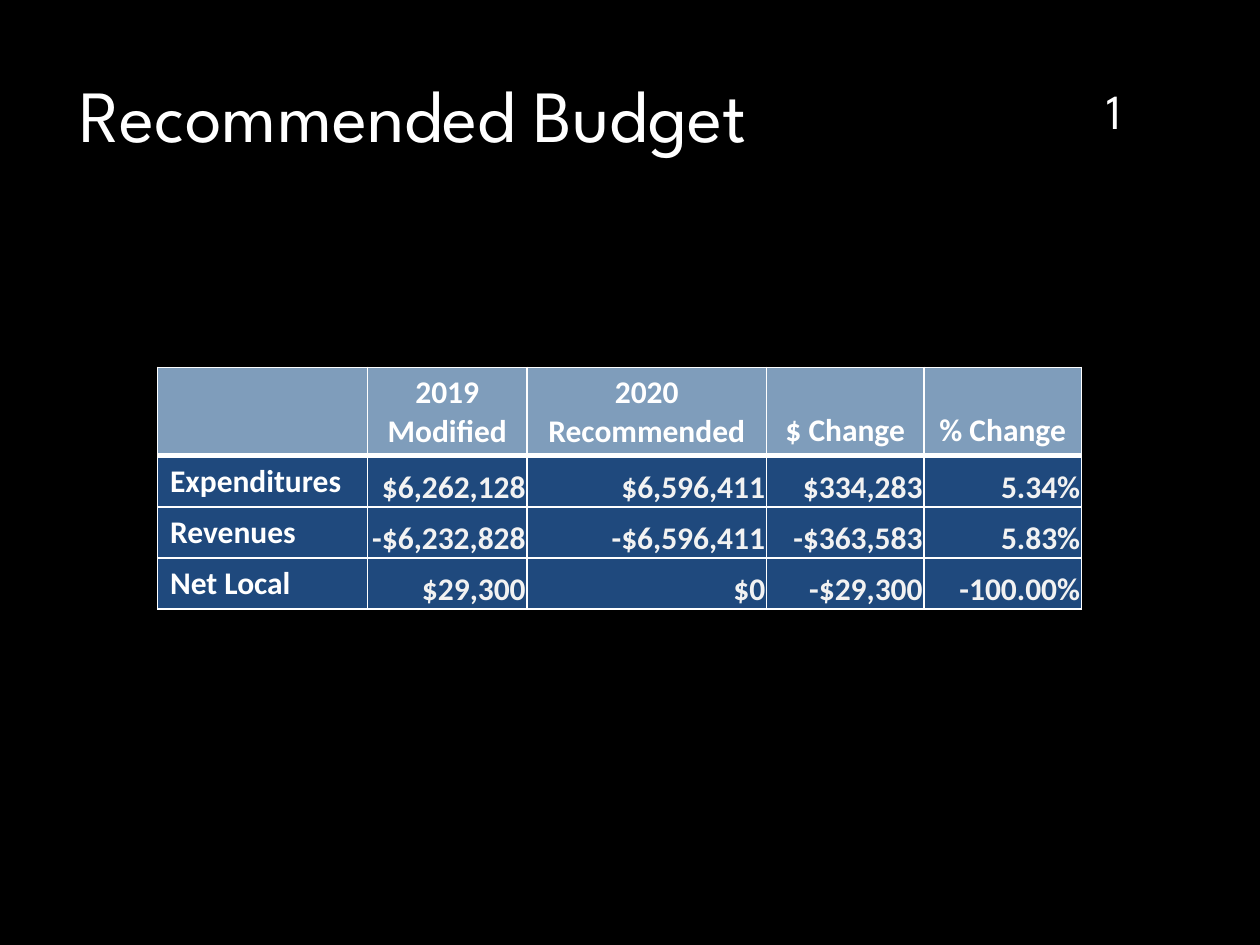
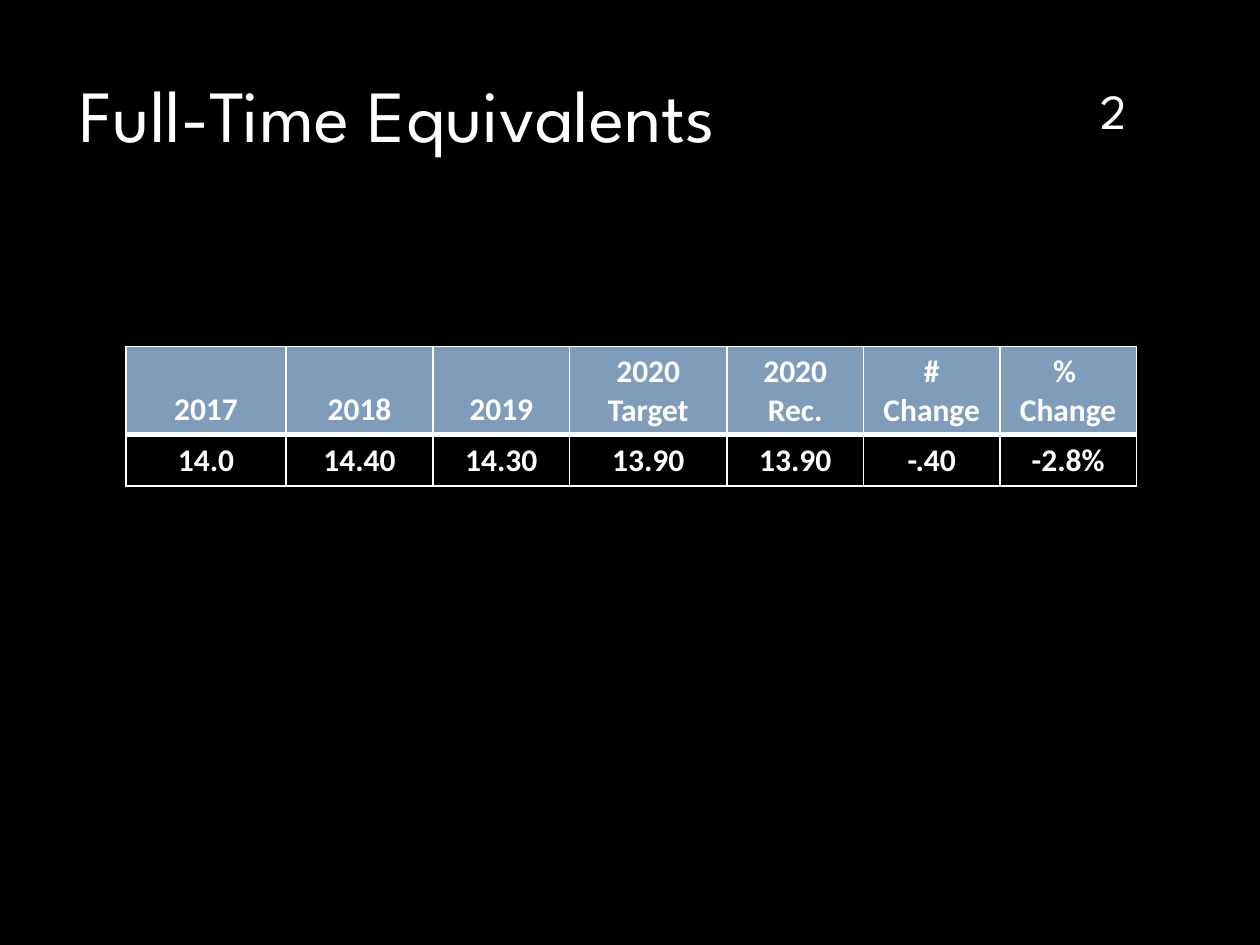
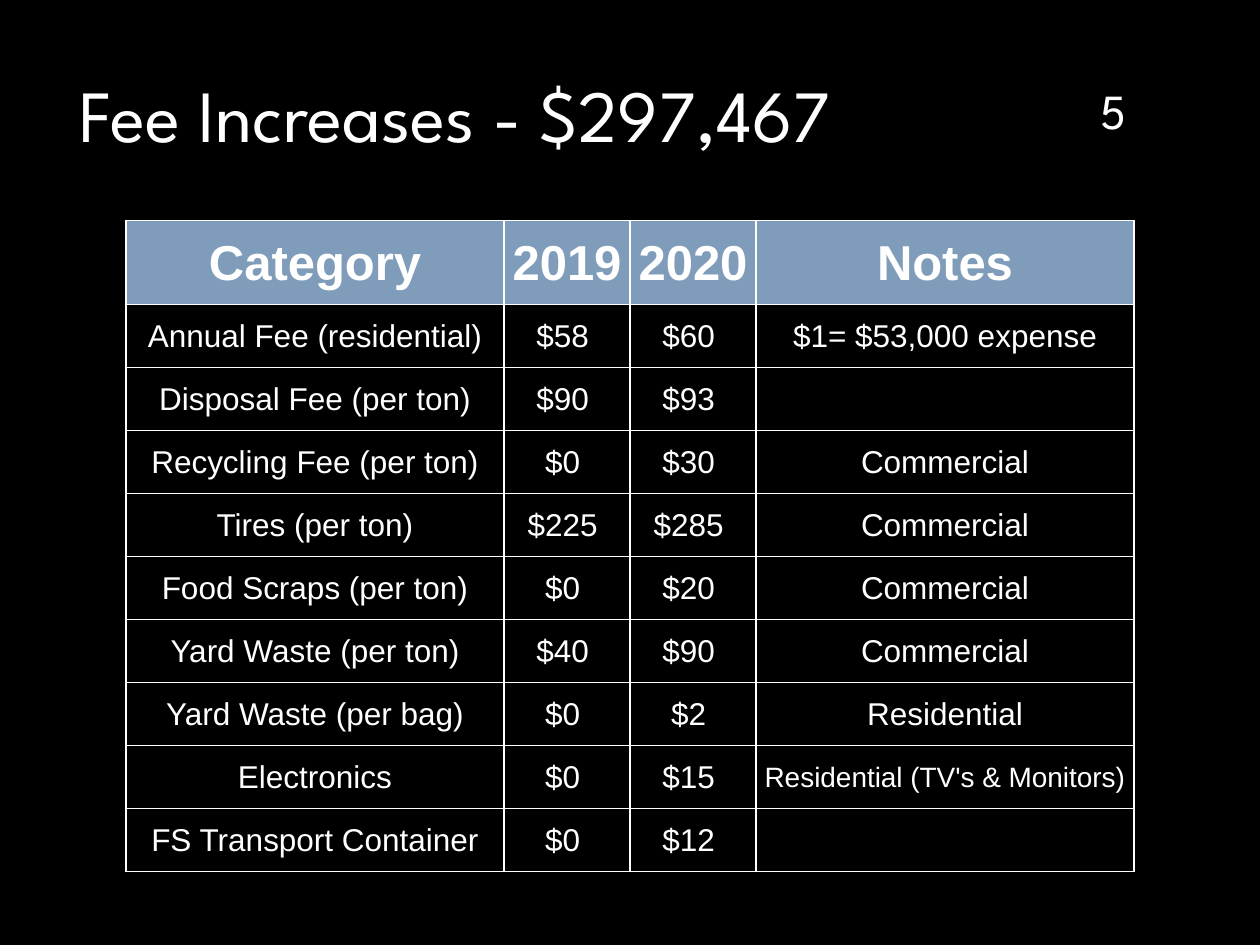
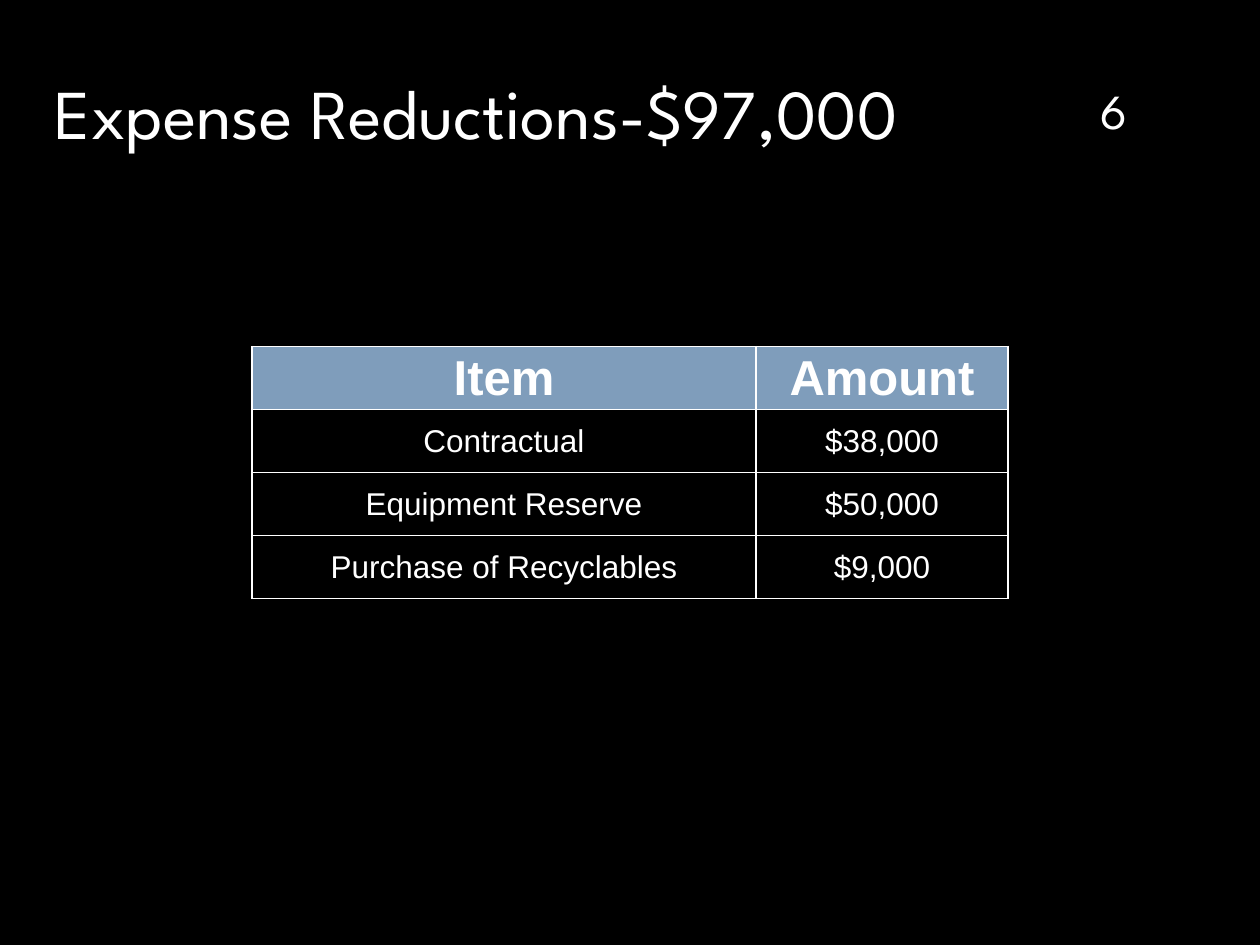
"""Build four budget slides: a title, a page number and a table on each."""
from dataclasses import dataclass, replace

from lxml import etree
from pptx import Presentation
from pptx import util as u
from pptx.dml.color import RGBColor
from pptx.enum import text
from pptx.oxml import ns

COLOURS = {
    "background": "000000",
    "text": "FFFFFF",
    "figure": "F2F2F2",
    "header": "7F9DBB",
    "body": "1F497D",
    "rule": "FFFFFF",
}
TITLE_FONT = "League Spartan"
GRID = u.Inches(1 / 12)
COLUMNS, ROWS = 120, 90
LEFT, CENTRE, RIGHT = text.PP_ALIGN.LEFT, text.PP_ALIGN.CENTER, text.PP_ALIGN.RIGHT
TOP, MIDDLE, BOTTOM = text.MSO_ANCHOR.TOP, text.MSO_ANCHOR.MIDDLE, text.MSO_ANCHOR.BOTTOM


@dataclass
class Style:
    """Look of the text and ground of one cell or box."""
    font: str
    size: float
    bold: bool = False
    colour: str = "text"
    align: int = CENTRE
    anchor: int = MIDDLE
    fill: str = ""
    tight: bool = False


TITLE = Style(TITLE_FONT, 42, align=LEFT, anchor=TOP)
NUMBER = Style(TITLE_FONT, 28, anchor=BOTTOM)
BUDGET_HEADER = Style("Calibri", 18, bold=True, anchor=BOTTOM, fill="header")
BUDGET_LABEL = Style("Calibri", 18, bold=True, align=LEFT, anchor=TOP, fill="body")
BUDGET_FIGURE = replace(BUDGET_LABEL, colour="figure", align=RIGHT, anchor=BOTTOM, tight=True)
STAFF_FIGURE = replace(BUDGET_HEADER, anchor=TOP, fill="")
FEE_HEADER = Style("Arial", 28, bold=True, fill="header", tight=True)
FEE_BODY = Style("Arial", 18, tight=True)
FEE_SMALL = replace(FEE_BODY, size=16)


def cells(count):
    """Turn a number of grid cells into a length."""
    return round(count * GRID)


def rgb(name):
    """Look up a colour by its role."""
    return RGBColor.from_string(COLOURS[name])


def write(frame, wording, style):
    """Write one paragraph for each line of the wording."""
    for index, line in enumerate(wording.split("\n")):
        paragraph = frame.add_paragraph() if index else frame.paragraphs[0]
        paragraph.alignment = style.align
        if not line:
            paragraph.font.size = u.Pt(style.size)
            continue
        run = paragraph.add_run()
        run.text = line
        run.font.name = style.font
        run.font.size = u.Pt(style.size)
        run.font.bold = style.bold
        run.font.color.rgb = rgb(style.colour)


def add_text(slide, place, wording, style):
    """Add a wrapping text box at a place on the grid."""
    frame = slide.shapes.add_textbox(*map(cells, place)).text_frame
    frame.word_wrap = True
    frame.vertical_anchor = style.anchor
    write(frame, wording, style)


def add_borders(cell, top, bottom):
    """Draw the four sides of a cell, with point widths for top and bottom."""
    properties = cell._tc.get_or_add_tcPr()
    sides = {"a:lnL": 1, "a:lnR": 1, "a:lnT": top, "a:lnB": bottom}
    for index, (side, width) in enumerate(sides.items()):
        line = etree.Element(ns.qn(side), w=str(u.Pt(width)))
        fill = etree.SubElement(line, ns.qn("a:solidFill"))
        etree.SubElement(fill, ns.qn("a:srgbClr"), val=COLOURS["rule"])
        properties.insert(index, line)


def fill_cell(cell, wording, style):
    """Set the ground, margins and wording of a cell."""
    if style.fill:
        cell.fill.solid()
        cell.fill.fore_color.rgb = rgb(style.fill)
    else:
        cell.fill.background()
    if style.tight:
        cell.margin_left = cell.margin_top = cell.margin_right = u.Inches(0.01)
        cell.margin_bottom = 0
    cell.vertical_anchor = style.anchor
    write(cell.text_frame, wording, style)


def add_table(slide, corner, widths, heights, records, header, label, figure,
              header_rule=1, special=None):
    """Add a table whose first record is its header."""
    special = special or {}
    size = sum(widths), sum(heights)
    table = slide.shapes.add_table(len(heights), len(widths),
                                   *map(cells, (*corner, *size))).table
    table.first_row = table.horz_banding = False
    for column, width in zip(table.columns, widths):
        column.width = cells(width)
    for row, height in zip(table.rows, heights):
        row.height = cells(height)
    for r, record in enumerate(records):
        for c, wording in enumerate(record):
            style = header if r == 0 else label if c == 0 else figure
            cell = table.cell(r, c)
            fill_cell(cell, wording, special.get(wording, style))
            add_borders(cell, header_rule if r == 1 else 1, header_rule if r == 0 else 1)


def add_page(deck, title, number, place=(6.4, 6, 92.6, 18.4), style=TITLE):
    """Add a black slide with its title and page number."""
    slide = deck.slides.add_slide(deck.slide_layouts[6])
    slide.background.fill.solid()
    slide.background.fill.fore_color.rgb = rgb("background")
    add_text(slide, place, title, style)
    add_text(slide, (101.9, 3.8, 8.3, 10.1), number, NUMBER)
    return slide


def add_budget(deck):
    """Add the recommended budget."""
    records = [
        ("", "2019\nModified", "2020\nRecommended", "$ Change", "% Change"),
        ("Expenditures", "$6,262,128", "$6,596,411", "$334,283", "5.34%"),
        ("Revenues", "-$6,232,828", "-$6,596,411", "-$363,583", "5.83%"),
        ("Net Local", "$29,300", "$0", "-$29,300", "-100.00%"),
    ]
    slide = add_page(deck, "Recommended Budget", "1")
    add_table(slide, (15, 35), (20, 15.2, 22.8, 15, 15), [8] + [4.87] * 3, records,
              BUDGET_HEADER, BUDGET_LABEL, BUDGET_FIGURE, header_rule=3)


def add_staff(deck):
    """Add the full-time equivalents."""
    records = [
        ("2017", "2018", "2019", "2020 Target", "2020\nRec.", "#\nChange", "% \nChange"),
        ("14.0", "14.40", "14.30", "13.90", "13.90", "-.40", "-2.8%"),
    ]
    slide = add_page(deck, "Full-Time Equivalents", "2")
    add_table(slide, (12, 33), (15.25, 14, 13, 15, 13, 13, 13), (8.4, 4.87), records,
              BUDGET_HEADER, STAFF_FIGURE, STAFF_FIGURE, header_rule=3)


def add_fees(deck):
    """Add the fee increases."""
    monitors = "Residential (TV's & Monitors)"
    records = [
        ("Category", "2019", "2020", "Notes"),
        ("Annual Fee (residential)", "$58 ", "$60 ", "$1= $53,000 expense"),
        ("Disposal Fee (per ton)", "$90 ", "$93 ", ""),
        ("Recycling Fee (per ton)", "$0 ", "$30 ", "Commercial"),
        ("Tires (per ton)", "$225 ", "$285 ", "Commercial"),
        ("Food Scraps (per ton)", "$0 ", "$20 ", "Commercial"),
        ("Yard Waste (per ton)", "$40 ", "$90 ", "Commercial"),
        ("Yard Waste (per bag)", "$0 ", "$2 ", "Residential"),
        ("Electronics", "$0 ", "$15 ", monitors),
        ("FS Transport Container", "$0 ", "$12 ", ""),
    ]
    slide = add_page(deck, "Fee Increases - $297,467", "5")
    add_table(slide, (12, 21), (36, 12, 12, 36), [8] + [6] * 9, records,
              FEE_HEADER, FEE_BODY, FEE_BODY, special={monitors: FEE_SMALL})


def add_reductions(deck):
    """Add the expense reductions."""
    records = [
        ("Item", "Amount"),
        ("Contractual", "$38,000"),
        ("Equipment Reserve", "$50,000"),
        ("Purchase of Recyclables", "$9,000"),
    ]
    slide = add_page(deck, "Expense Reductions-$97,000", "6",
                     (4, 6, 101.6, 18.4), replace(TITLE, size=40))
    add_table(slide, (24, 33), (48, 24), [6] * 4, records, FEE_HEADER, FEE_BODY, FEE_BODY)


def main():
    """Build and save the deck."""
    deck = Presentation()
    deck.slide_width, deck.slide_height = cells(COLUMNS), cells(ROWS)
    for add_slide in (add_budget, add_staff, add_fees, add_reductions):
        add_slide(deck)
    deck.save("out.pptx")


if __name__ == "__main__":
    main()
